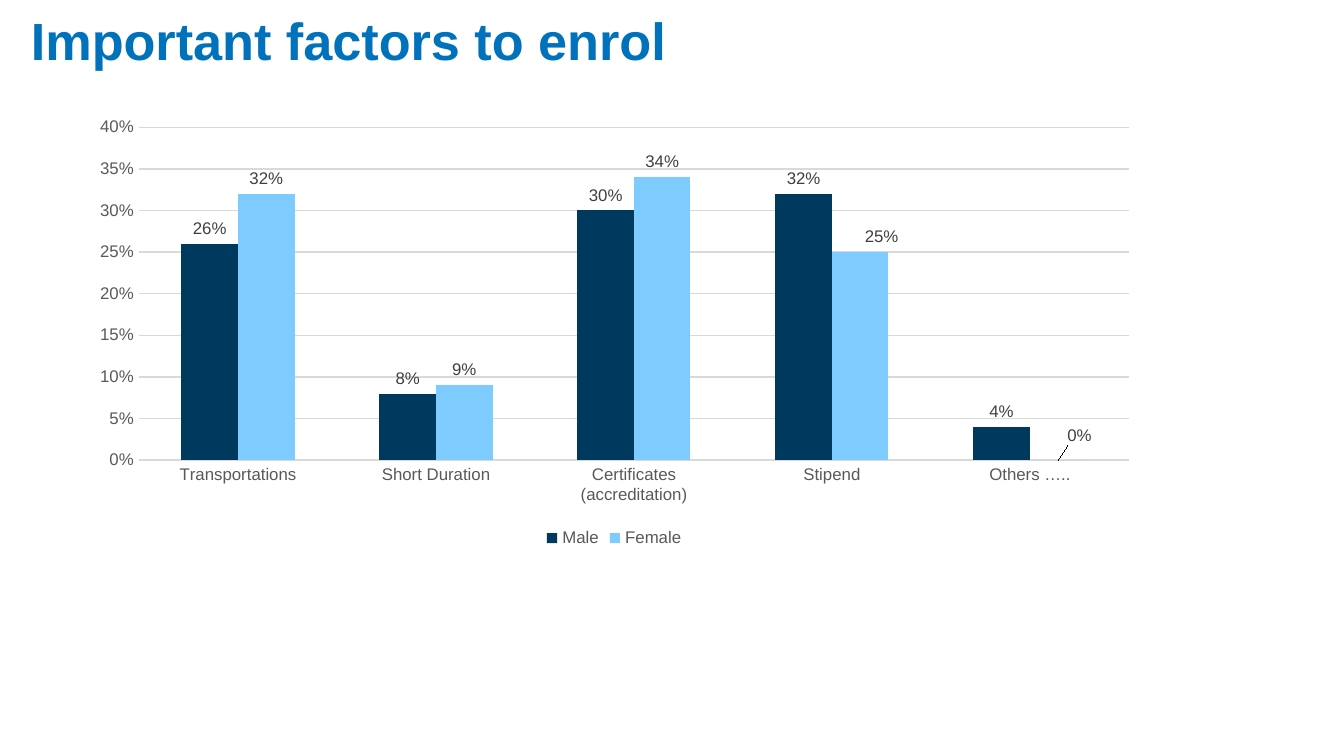
"""Build a slide comparing enrolment factors for men and women in a column chart."""
from lxml import etree
from pptx import Presentation
from pptx.chart.data import CategoryChartData
from pptx.dml.color import RGBColor
from pptx.enum.chart import XL_CHART_TYPE, XL_LABEL_POSITION, XL_LEGEND_POSITION, XL_TICK_MARK
from pptx.oxml import parse_xml
from pptx.oxml.ns import qn
from pptx.util import Inches, Pt

COLUMN = XL_CHART_TYPE.COLUMN_CLUSTERED
OUTSIDE = XL_LABEL_POSITION.OUTSIDE_END
BOTTOM = XL_LEGEND_POSITION.BOTTOM
NO_TICK = XL_TICK_MARK.NONE

BLUE = RGBColor(0x00, 0x72, 0xBC)
NAVY = RGBColor(0x00, 0x39, 0x5E)
SKY = RGBColor(0x7E, 0xCC, 0xFF)
GRAY = RGBColor(0x59, 0x59, 0x59)
DARK = RGBColor(0x40, 0x40, 0x40)
GRID = RGBColor(0xD9, 0xD9, 0xD9)
PERCENT = "0%"
CHART_NS = "http://schemas.openxmlformats.org/drawingml/2006/chart"
NO_LEADERS = (f'<c:extLst xmlns:c="{CHART_NS}"><c:ext uri="{{CE6537A1-D6FC-4f65-9D91-7224C49458BB}}" '
              'xmlns:c15="http://schemas.microsoft.com/office/drawing/2012/chart">'
              '<c15:showLeaderLines val="0"/></c:ext></c:extLst>')


def set_font(font, color, **formats):
    for name, value in {"name": "Arial", "size": Pt(9), "bold": False, **formats}.items():
        setattr(font, name, value)
    font.color.rgb = color


def manual_layout(**values):
    layout = parse_xml(f'<c:layout xmlns:c="{CHART_NS}"><c:manualLayout/></c:layout>')
    for name, value in values.items():
        etree.SubElement(layout[0], qn(f"c:{name}")).set("val", str(value))
    return layout


prs = Presentation()
prs.slide_width = Inches(10)
prs.slide_height = prs.slide_width * 9 // 16
W, H = prs.slide_width, prs.slide_height
s = prs.slides.add_slide(prs.slide_layouts[6])

title = s.shapes.add_textbox(int(W * 0.023), int(H * 0.02), int(W * 0.957), int(H * 0.08))
tf = title.text_frame
for name in ("margin_left", "margin_top", "margin_right", "margin_bottom"):
    setattr(tf, name, 0)
tf.word_wrap = True
p = tf.paragraphs[0]
p.line_spacing = 0.9
r = p.add_run()
r.text = "Important factors to enrol"
set_font(r.font, BLUE, size=Pt(28), bold=True)

data = CategoryChartData(number_format=PERCENT)
data.categories = ["Transportations", "Short Duration", "Certificates (accreditation)",
                   "Stipend", "Others ….."]
data.add_series("Male", [0.26, 0.08, 0.3, 0.32, 0.04])
data.add_series("Female", [0.32, 0.09, 0.34, 0.25, 0])
chart = s.shapes.add_chart(COLUMN, int(W * 0.058), int(H * 0.145),
                           int(W * 0.798), int(H * 0.587), data).chart
set_font(chart.font, GRAY)
chart.has_title = False
chart.has_legend = True
chart.legend.position = BOTTOM
chart.legend.include_in_layout = False
set_font(chart.legend.font, GRAY)

for axis in (chart.category_axis, chart.value_axis):
    axis.major_tick_mark = axis.minor_tick_mark = NO_TICK
    axis.format.line.fill.background()
    set_font(axis.tick_labels.font, GRAY)

axis = chart.value_axis
for name, value in {"minimum_scale": 0, "maximum_scale": 0.4, "major_unit": 0.05}.items():
    setattr(axis, name, value)
axis.tick_labels.number_format = PERCENT
axis.tick_labels.number_format_is_linked = False
line = axis.major_gridlines.format.line
line.color.rgb = GRID
line.width = Pt(0.75)

plot = chart.plots[0]
plot.gap_width, plot.overlap, plot.vary_by_categories = 150, 0, False
for series, color in zip(plot.series, (NAVY, SKY)):
    series.format.fill.solid()
    series.format.fill.fore_color.rgb = color
    labels = series.data_labels
    for name, value in {"show_value": True, "number_format": PERCENT,
                        "number_format_is_linked": False, "position": OUTSIDE}.items():
        setattr(labels, name, value)
    set_font(labels.font, DARK)

female = plot.series[1]
for index, dx, dy in ((3, 0.02, 0), (4, 0.02, -0.02)):
    label = female.points[index].data_label
    set_font(label.font, DARK)
    label.position = OUTSIDE
    idx = chart.element.xpath(f'.//c:dLbl/c:idx[@val="{index}"]')[0]
    number = parse_xml(f'<c:numFmt xmlns:c="{CHART_NS}" formatCode="{PERCENT}" sourceLinked="0"/>')
    idx.addnext(number)
    idx.addnext(manual_layout(x=dx, y=dy))
chart.element.xpath(".//c:ser/c:dLbls")[1].append(parse_xml(NO_LEADERS))

area = chart.element.find(f".//{qn('c:plotArea')}")
for old in area.findall(qn("c:layout")):
    area.remove(old)
area.insert(0, manual_layout(layoutTarget="inner", xMode="edge", yMode="edge",
                             x=0.057, y=0.04, w=0.923, h=0.75))

prs.save("out.pptx")
